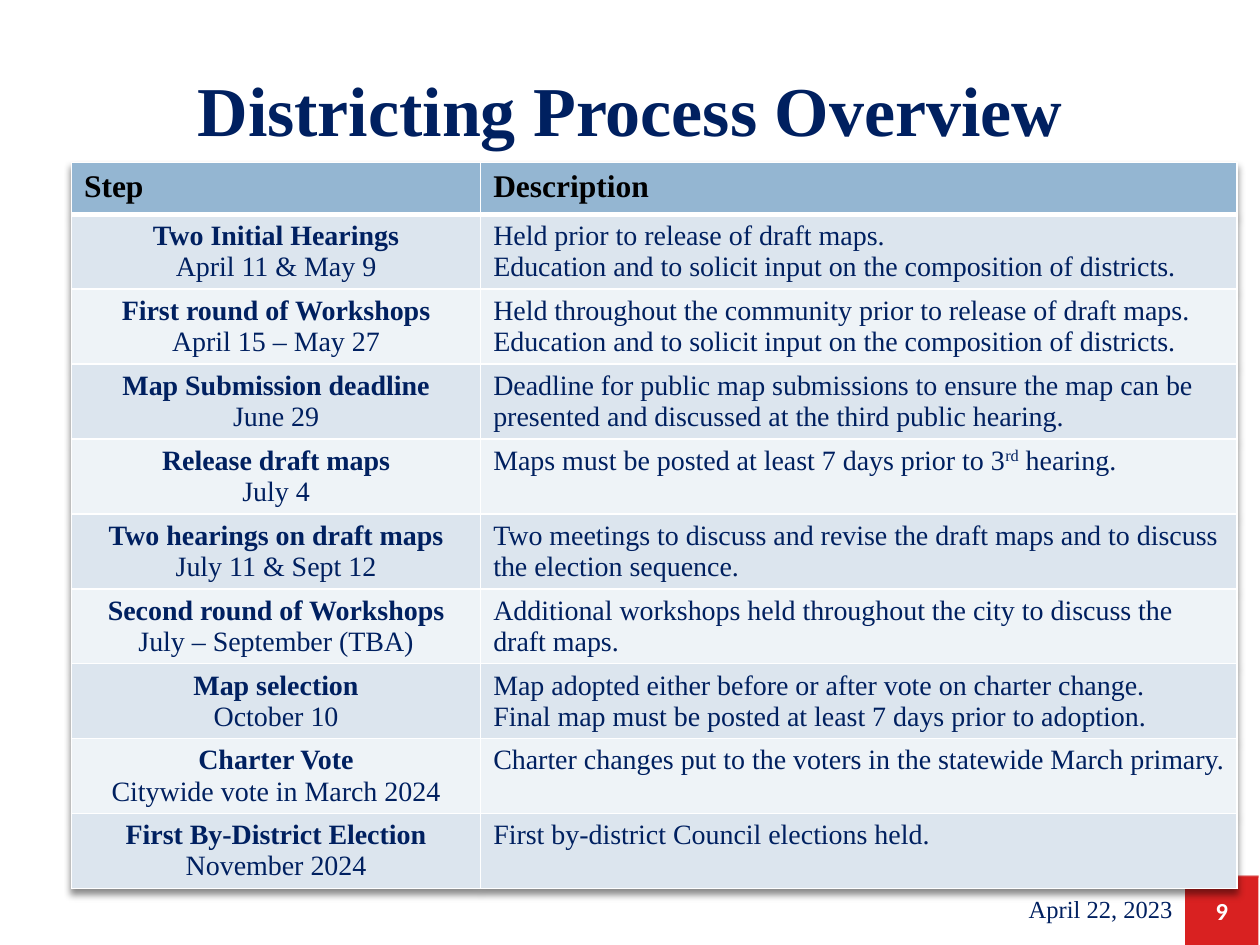
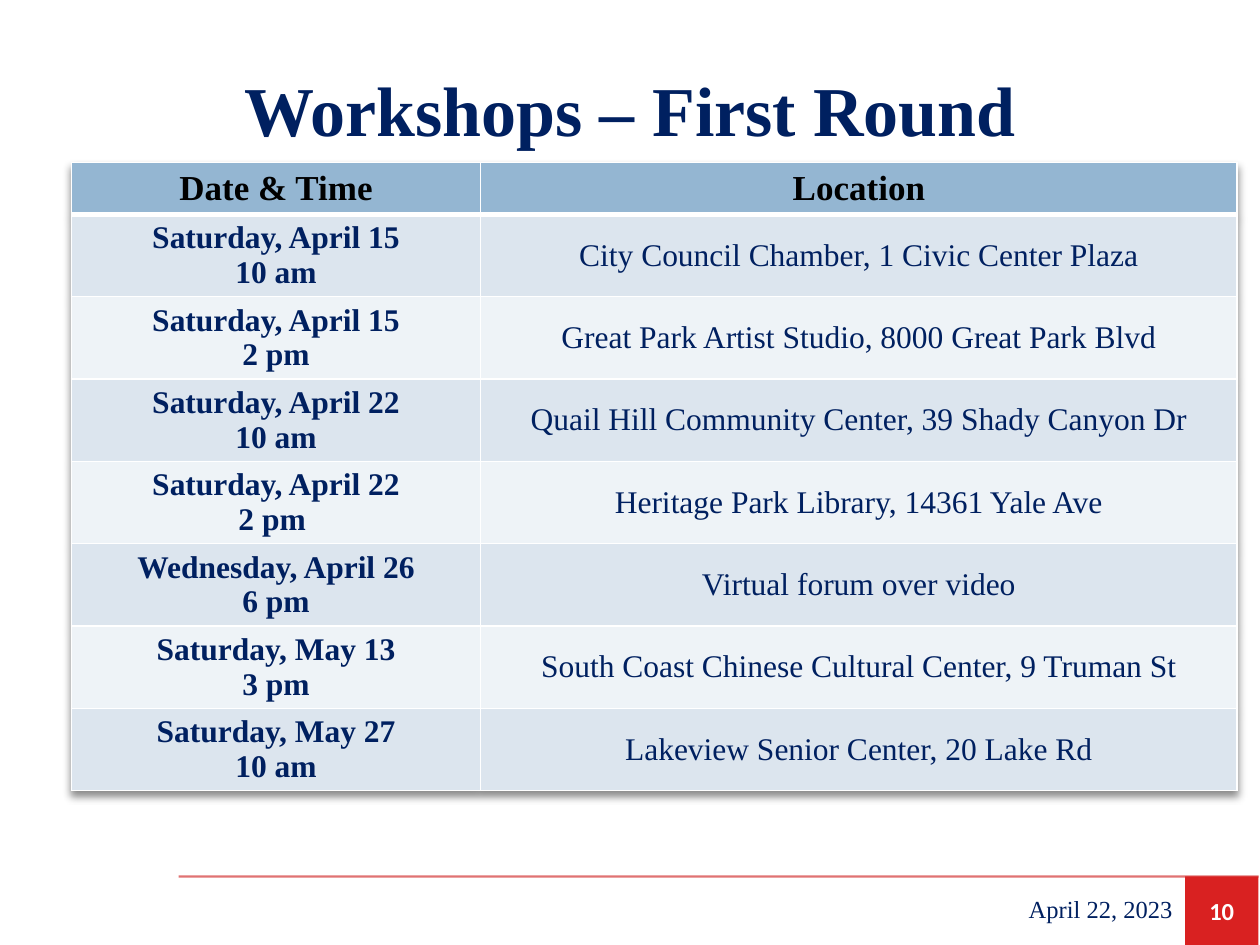
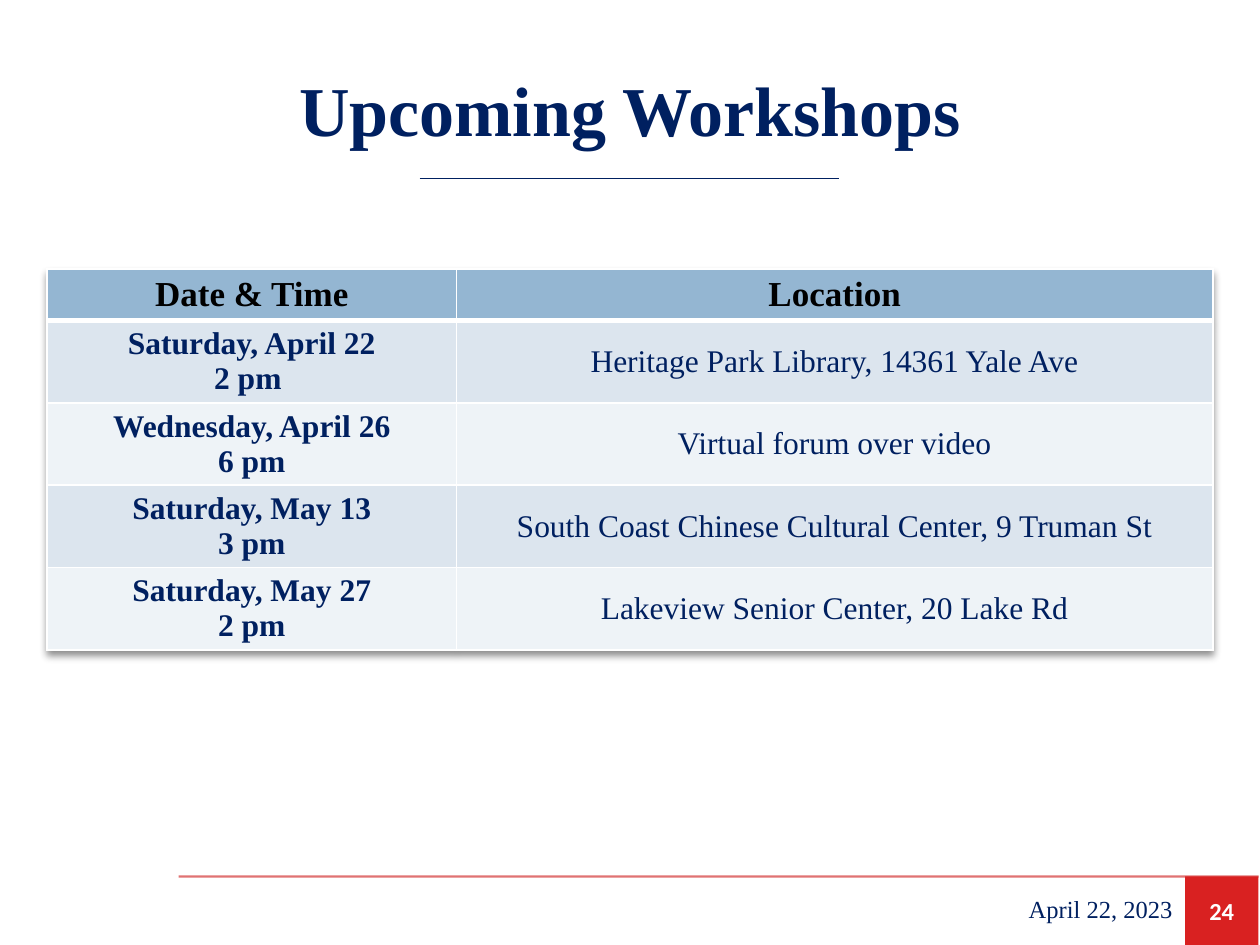
from lxml import etree
from pptx import Presentation
from pptx import util as u
from pptx.dml.color import RGBColor
from pptx.enum import shapes, text
from pptx.oxml import ns

COLORS = {
    "navy": "002060", "black": "000000", "white": "FFFFFF", "rule": "C80000",
    "badge": "D92121", "header": "94B6D2", "band_dark": "DCE5EE", "band_light": "EEF3F7",
}
SERIF = "Times New Roman"
LEFT, CENTER, RIGHT = text.PP_ALIGN.LEFT, text.PP_ALIGN.CENTER, text.PP_ALIGN.RIGHT
MIDDLE = text.MSO_ANCHOR.MIDDLE
COLUMN_WIDTHS = (8.25, 15.25)
HEADER_HEIGHT = 1.04

PROCESS_STEPS = [
    ("Two Initial Hearings", "April 11 & May 9",
     ["Held prior to release of draft maps.",
      "Education and to solicit input on the composition of districts."]),
    ("First round of Workshops", "April 15 – May 27",
     ["Held throughout the community prior to release of draft maps.",
      "Education and to solicit input on the composition of districts."]),
    ("Map Submission deadline", "June 29",
     ["Deadline for public map submissions to ensure the map can be presented "
      "and discussed at the third public hearing."]),
    ("Release draft maps", "July 4",
     ["Maps must be posted at least 7 days prior to 3^rd^ hearing."]),
    ("Two hearings on draft maps", "July 11 & Sept 12",
     ["Two meetings to discuss and revise the draft maps and to discuss the election sequence."]),
    ("Second round of Workshops", "July – September (TBA)",
     ["Additional workshops held throughout the city to discuss the draft maps."]),
    ("Map selection", "October 10",
     ["Map adopted either before or after vote on charter change.",
      "Final map must be posted at least 7 days prior to adoption."]),
    ("Charter Vote", "Citywide vote in March 2024",
     ["Charter changes put to the voters in the statewide March primary."]),
    ("First By-District Election", "November 2024",
     ["First by-district Council elections held."]),
]
HERITAGE = ("Saturday, April 22", "2 pm ", "Heritage Park Library, 14361 Yale Ave")
VIRTUAL = ("Wednesday, April 26", "6 pm", "Virtual forum over video")
SOUTH_COAST = ("Saturday, May 13", "3 pm", "South Coast Chinese Cultural Center, 9 Truman St")
LAKEVIEW = "Lakeview Senior Center, 20 Lake Rd"
FIRST_ROUND = [
    ("Saturday, April 15", "10 am", "City Council Chamber, 1 Civic Center Plaza"),
    ("Saturday, April 15", "2 pm", "Great Park Artist Studio, 8000 Great Park Blvd"),
    ("Saturday, April 22", "10 am", "Quail Hill Community Center, 39 Shady Canyon Dr"),
    HERITAGE, VIRTUAL, SOUTH_COAST,
    ("Saturday, May 27", "10 am", LAKEVIEW),
]
UPCOMING = [HERITAGE, VIRTUAL, SOUTH_COAST, ("Saturday, May 27", "2 pm", LAKEVIEW)]


def rgb(name):
    return RGBColor.from_string(COLORS[name])


def add_child(parent, tag, **attributes):
    return etree.SubElement(parent, ns.qn(tag), attributes)


def write(frame, lines, size, color="navy", align=LEFT, bold=(False,), font=SERIF):
    """Write one paragraph per line; ^marks^ enclose superscript, the last bold flag repeats."""
    for index, line in enumerate(lines):
        paragraph = frame.paragraphs[0] if index == 0 else frame.add_paragraph()
        paragraph.alignment = align
        for part, words in enumerate(line.split("^")):
            run = paragraph.add_run()
            run.text = words
            run.font.name = font
            run.font.size = u.Pt(size)
            run.font.bold = bold[min(index, len(bold) - 1)]
            run.font.color.rgb = rgb(color)
            if part % 2:
                run.font._element.set("baseline", "30000")


def write_cell(cell, lines, size, **style):
    """Write from the top of a cell, with no bottom margin so that the row keeps its height."""
    cell.margin_bottom = 0
    write(cell.text_frame, lines, size, **style)


def add_text(slide, place, line, size, align, bold=False):
    frame = slide.shapes.add_textbox(*map(u.Cm, place)).text_frame
    frame.word_wrap = True
    frame.vertical_anchor = MIDDLE
    write(frame, [line], size, align=align, bold=(bold,))


def add_rule(slide, start, end, y, color, width, opacity=None):
    line = slide.shapes.add_connector(
        shapes.MSO_CONNECTOR.STRAIGHT, u.Cm(start), u.Cm(y), u.Cm(end), u.Cm(y))
    line.line.color.rgb = rgb(color)
    line.line.width = u.Pt(width)
    properties = line._element.spPr
    add_child(properties, "a:effectLst")
    if opacity:
        fill_color = properties.find(".//" + ns.qn("a:srgbClr"))
        add_child(fill_color, "a:alpha", val=str(opacity * 1000))


def add_page_badge(slide, number):
    badge = slide.shapes.add_shape(
        shapes.MSO_SHAPE.RECTANGLE, *map(u.Cm, (23.89, 17.67, 1.48, 1.38)))
    badge.shadow.inherit = False
    badge.fill.solid()
    badge.fill.fore_color.rgb = rgb("badge")
    badge.line.fill.background()
    frame = badge.text_frame
    frame.margin_left = frame.margin_right = 0
    frame.vertical_anchor = MIDDLE
    write(frame, [str(number)], 14, "white", CENTER, (True,), "Calibri")


def add_titled_slide(presentation, title, number):
    slide = presentation.slides.add_slide(presentation.slide_layouts[6])
    add_rule(slide, 3.6, 25.37, 17.67, "rule", 1.25, opacity=55)
    add_page_badge(slide, number)
    add_text(slide, (0.95, 0.81, 23.5, 2.74), title, 40, CENTER, True)
    add_rule(slide, 8.46, 16.92, 3.6, "navy", 0.75)
    return slide


def add_date(slide):
    add_text(slide, (16.47, 17.81, 7.42, 1.02), "April 22, 2023", 14, RIGHT)


def add_table_shadow(table):
    effects = etree.Element(ns.qn("a:effectLst"))
    shadow = add_child(effects, "a:outerShdw", blurRad="50800", dist="38100",
                       dir="5400000", rotWithShape="0")
    color = add_child(shadow, "a:srgbClr", val=COLORS["black"])
    add_child(color, "a:alpha", val="45000")
    table._tbl.tblPr.insert(0, effects)


def style_cell(cell, fill, bottom=1, top=1):
    """Draw white borders, widths in points, and fill the cell."""
    properties = cell._tc.get_or_add_tcPr()
    for side, width in (("L", 1), ("R", 1), ("T", top), ("B", bottom)):
        border = add_child(properties, "a:ln" + side, w=str(u.Pt(width)))
        add_child(add_child(border, "a:solidFill"), "a:srgbClr", val=COLORS["white"])
    cell.fill.solid()
    cell.fill.fore_color.rgb = rgb(fill)


def add_banded_table(slide, left, top, headings, row_count, row_height, size, align):
    """Add a shadowed table with its heading row written and the body rows banded."""
    height = HEADER_HEIGHT + row_count * row_height
    table = slide.shapes.add_table(
        row_count + 1, 2, *map(u.Cm, (left, top, sum(COLUMN_WIDTHS), height))).table
    add_table_shadow(table)
    for column, width in zip(table.columns, COLUMN_WIDTHS):
        column.width = u.Cm(width)
    for index, row in enumerate(table.rows):
        row.height = u.Cm(row_height if index else HEADER_HEIGHT)
        for cell in row.cells:
            if index:
                style_cell(cell, "band_dark" if index % 2 else "band_light",
                           top=3 if index == 1 else 1)
            else:
                style_cell(cell, "header", bottom=3)
    for cell, heading in zip(table.rows[0].cells, headings):
        write_cell(cell, [heading], size, color="black", align=align, bold=(True,))
    return table


def add_process_table(slide, left, top):
    table = add_banded_table(slide, left, top, ("Step", "Description"),
                             len(PROCESS_STEPS), 1.51, 18, LEFT)
    for index, (step, date, description) in enumerate(PROCESS_STEPS, 1):
        write_cell(table.cell(index, 0), [step, date], 16, align=CENTER, bold=(True, False))
        write_cell(table.cell(index, 1), description, 16)


def add_workshop_table(slide, left, top, workshops):
    table = add_banded_table(slide, left, top, ("Date & Time", "Location"),
                             len(workshops), 1.66, 20, CENTER)
    for index, (day, time, location) in enumerate(workshops, 1):
        write_cell(table.cell(index, 0), [day, time], 18, align=CENTER, bold=(True,))
        place = table.cell(index, 1)
        place.vertical_anchor = MIDDLE
        write(place.text_frame, [location], 18, align=CENTER)


def main():
    presentation = Presentation()
    presentation.slide_width, presentation.slide_height = u.Cm(25.4), u.Cm(19.05)

    slide = add_titled_slide(presentation, "Districting Process Overview", 9)
    add_process_table(slide, 1.44, 3.28)
    add_date(slide)

    slide = add_titled_slide(presentation, "Workshops – First Round", 10)
    add_workshop_table(slide, 1.44, 3.28, FIRST_ROUND)
    add_date(slide)

    slide = add_titled_slide(presentation, "Upcoming Workshops", 24)
    add_workshop_table(slide, 0.95, 5.42, UPCOMING)
    add_date(slide)

    presentation.save("out.pptx")


if __name__ == "__main__":
    main()
